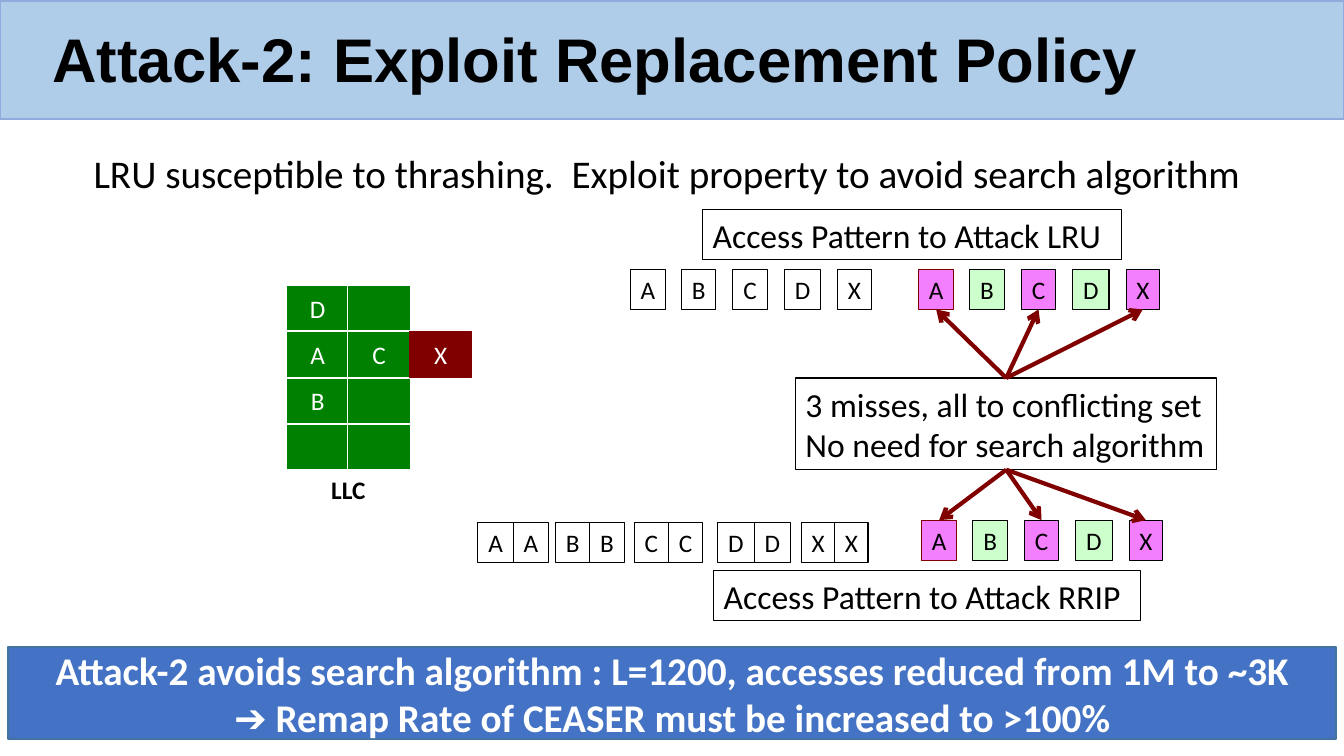
"""Build the slide on attacking the cache replacement policy."""
from lxml import etree
from pptx import Presentation
from pptx.dml.color import RGBColor
from pptx.enum import shapes, text
from pptx.oxml import ns
from pptx.util import Inches, Pt

COLORS = {
    "black": "000000", "white": "FFFFFF", "band": "AFCCE9", "band_line": "8FAADC",
    "blue": "4472C4", "blue_line": "43739E", "green": "008000", "maroon": "800000",
    "pink": "F37FFF", "mint": "CCFFCC",
}
LETTER_WIDTHS = {"A": 0.35, "B": 0.34, "C": 0.34, "D": 0.36, "X": 0.33}
SEQUENCE_OFFSETS = {"A": 0, "B": 0.51, "C": 1.02, "D": 1.53, "X": 2.06}
PAIR_LEFTS = {"A": 4.74, "B": 5.51, "C": 6.29, "D": 7.12, "X": 7.95}
LLC_ROWS = [("D", ""), ("A", "C"), ("B", ""), ("", "")]
LLC_LEFT, LLC_TOP, LLC_STEP_X, LLC_STEP_Y = 2.84, 2.83, 0.61, 0.46


def rgb(name):
    return RGBColor.from_string(COLORS[name])


def write(frame, content, size=18, color="black", bold=False, font="Calibri",
          align="LEFT", wrap=True, margin=0.1, spacing=None):
    frame.word_wrap = wrap
    frame.auto_size = text.MSO_AUTO_SIZE.NONE
    frame.vertical_anchor = text.MSO_ANCHOR.MIDDLE
    frame.margin_left = Inches(margin)
    frame.margin_right = 0
    frame.margin_top = frame.margin_bottom = Inches(0.05)
    for index, line in enumerate(content.split("\n")):
        paragraph = frame.add_paragraph() if index else frame.paragraphs[0]
        paragraph.alignment = getattr(text.PP_ALIGN, align)
        if spacing:
            paragraph.line_spacing = spacing
        run = paragraph.add_run()
        run.text = line
        run.font.size, run.font.bold, run.font.name = Pt(size), bold, font
        run.font.color.rgb = rgb(color)


class SlideBuilder:
    """Hold the shared style and the current slide."""

    arrow_width = 3
    arrow_color = "maroon"

    def __init__(self, presentation):
        self.slide = presentation.slides.add_slide(presentation.slide_layouts[5])

    def title(self, content):
        band = self.box(0, 0.01, 13.33, 1.17, fill="band", line="band_line", line_width=1)
        self.slide.shapes._spTree.insert(2, band._element)
        title = self.slide.shapes.title
        title.left, title.top = Inches(0.42), Inches(0.23)
        title.width, title.height = Inches(12.67), Inches(0.78)
        write(title.text_frame, content, size=44, bold=True, font="Arial", spacing=0.9)

    def box(self, left, top, width, height, content="", fill=None, line="black",
            line_width=0.75, **style):
        shape = self.slide.shapes.add_shape(
            shapes.MSO_SHAPE.RECTANGLE, Inches(left), Inches(top),
            Inches(width), Inches(height))
        shape.shadow.inherit = False
        if fill:
            shape.fill.solid()
            shape.fill.fore_color.rgb = rgb(fill)
        else:
            shape.fill.background()
        shape.line.color.rgb = rgb(line)
        shape.line.width = Pt(line_width)
        if content:
            write(shape.text_frame, content, **style)
        return shape

    def cell(self, left, top, width, height, letter, **look):
        return self.box(left, top, width, height, letter, align="CENTER",
                        wrap=False, margin=0, **look)

    def label(self, left, top, width, height, content, **style):
        shape = self.slide.shapes.add_textbox(
            Inches(left), Inches(top), Inches(width), Inches(height))
        write(shape.text_frame, content, **style)

    def cache(self):
        for row, letters in enumerate(LLC_ROWS):
            for column, letter in enumerate(letters):
                self.cell(LLC_LEFT + column * LLC_STEP_X, LLC_TOP + row * LLC_STEP_Y,
                          0.62, 0.45, letter, fill="green", line="white",
                          line_width=0.5, color="white")
        self.cell(LLC_LEFT + 2 * LLC_STEP_X, LLC_TOP + LLC_STEP_Y, 0.62, 0.45, "X",
                  fill="maroon", line="maroon", line_width=0.5, color="white")
        self.label(3.18, 4.66, 0.55, 0.4, "LLC", bold=True, align="CENTER",
                   wrap=False, margin=0)

    def sequence(self, left, top, colored=False):
        cells = {}
        for letter, offset in SEQUENCE_OFFSETS.items():
            fill = ("mint" if letter in "BD" else "pink") if colored else None
            line = "maroon" if colored and letter == "A" else "black"
            cells[letter] = self.cell(left + offset, top, LETTER_WIDTHS[letter], 0.4,
                                      letter, fill=fill, line=line)
        return cells

    def pairs(self, top):
        for letter, left in PAIR_LEFTS.items():
            width = LETTER_WIDTHS[letter]
            for position in range(2):
                self.cell(left + position * width, top, width, 0.4, letter)

    def arrow(self, source, source_side, target, target_side):
        connector = self.slide.shapes.add_connector(
            shapes.MSO_CONNECTOR.STRAIGHT, 0, 0, 0, 0)
        connector.begin_connect(source, source_side)
        connector.end_connect(target, target_side)
        connector.line.color.rgb = rgb(self.arrow_color)
        connector.line.width = Pt(self.arrow_width)
        etree.SubElement(connector.line._get_or_add_ln(), ns.qn("a:tailEnd"), type="arrow")
        etree.SubElement(connector._element.spPr, ns.qn("a:effectLst"))


def main():
    presentation = Presentation()
    presentation.slide_width, presentation.slide_height = Inches(13.33), Inches(7.5)
    builder = SlideBuilder(presentation)

    builder.title("Attack-2: Exploit Replacement Policy")
    builder.box(0.08, 6.42, 13.17, 0.91,
                "Attack-2 avoids search algorithm : L=1200, accesses reduced from 1M to ~3K\n"
                "➔ Remap Rate of CEASER must be increased to >100%",
                fill="blue", line="blue_line", line_width=1, size=28, color="white",
                bold=True, align="CENTER", margin=0)
    builder.label(0.83, 1.43, 11.74, 0.57,
                  "LRU susceptible to thrashing.  Exploit property to avoid search algorithm",
                  size=28)
    builder.cache()

    builder.box(6.97, 2.08, 4.15, 0.5, "Access Pattern to Attack LRU", size=24)
    builder.sequence(6.25, 2.67)
    lru_cells = builder.sequence(9.11, 2.67, colored=True)

    builder.pairs(5.18)
    rrip_cells = builder.sequence(9.14, 5.16, colored=True)
    builder.box(7.08, 5.66, 4.23, 0.5, "Access Pattern to Attack RRIP", size=24)

    misses = builder.box(7.89, 3.75, 4.18, 0.91,
                         "3 misses, all to conflicting set\nNo need for search algorithm",
                         size=24)
    for letter in "ACX":
        builder.arrow(misses, 0, lru_cells[letter], 2)
        builder.arrow(misses, 2, rrip_cells[letter], 0)

    presentation.save("out.pptx")


if __name__ == "__main__":
    main()
